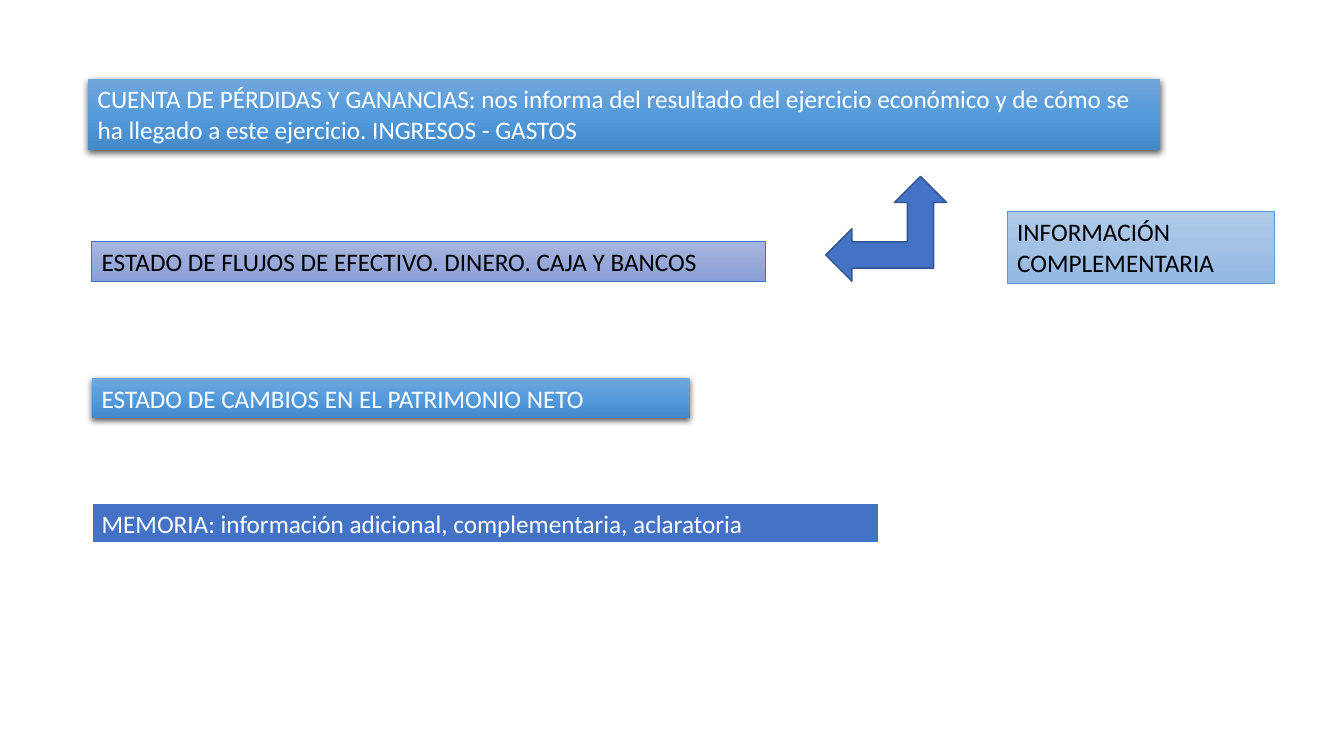
import copy

import pptx
import pptx.dml.color
import pptx.enum.shapes
import pptx.enum.text
import pptx.oxml
import pptx.oxml.ns
import pptx.util

RGB = pptx.dml.color.RGBColor
Inches = pptx.util.Inches
SHAPES = pptx.enum.shapes.MSO_SHAPE

WHITE = RGB(0xFF, 0xFF, 0xFF)
BLACK = RGB(0x00, 0x00, 0x00)
BLUE = RGB(0x44, 0x72, 0xC4)
DARK_BLUE = RGB(0x32, 0x54, 0x91)
SKY = RGB(0x5B, 0x9B, 0xD5)
STRONG_SKY = [RGB(0x71, 0xA6, 0xDB), RGB(0x55, 0x9B, 0xDB), RGB(0x44, 0x8A, 0xCA)]
SOFT_BLUE = [RGB(0xA8, 0xB7, 0xDF), RGB(0x9A, 0xAB, 0xD9), RGB(0x88, 0x9E, 0xD7)]
SOFT_SKY = [RGB(0xB1, 0xCB, 0xE9), RGB(0xA3, 0xC1, 0xE5), RGB(0x93, 0xB9, 0xE4)]

STYLES = {
    "raised": dict(colors=STRONG_SKY, border=None, ink=WHITE, raised=True),
    "soft blue": dict(colors=SOFT_BLUE, border=(BLUE, 0.5), ink=BLACK),
    "soft sky": dict(colors=SOFT_SKY, border=(SKY, 0.5), ink=BLACK),
    "solid": dict(colors=[BLUE], border=(WHITE, 1.5), ink=WHITE),
}

STATEMENTS = [
    ("CUENTA DE PÉRDIDAS Y GANANCIAS: nos informa del resultado del ejercicio "
     "económico y de cómo se ha llegado a este ejercicio. INGRESOS - GASTOS",
     (0.87, 0.78, 10.64, 0.71), "raised"),
    ("ESTADO DE FLUJOS DE EFECTIVO. DINERO. CAJA Y BANCOS",
     (0.91, 2.39, 6.68, 0.4), "soft blue"),
    ("INFORMACIÓN COMPLEMENTARIA", (9.99, 2.1, 2.65, 0.71), "soft sky"),
    ("ESTADO DE CAMBIOS EN EL PATRIMONIO NETO",
     (0.91, 3.75, 5.93, 0.4), "raised"),
    ("MEMORIA: información adicional, complementaria, aclaratoria",
     (0.91, 4.99, 7.81, 0.4), "solid"),
]
ARROW_BOX = (8.19, 1.75, 1.2, 1.04)

SHADOW = (
    '<a:outerShdw xmlns:a="http://schemas.openxmlformats.org/drawingml/2006/main" '
    'blurRad="57150" dist="19050" dir="5400000" algn="ctr" rotWithShape="0">'
    '<a:srgbClr val="000000"><a:alpha val="63000"/></a:srgbClr></a:outerShdw>'
)


def paint(shape, colors):
    if len(colors) == 1:
        shape.fill.solid()
        shape.fill.fore_color.rgb = colors[0]
        return
    shape.fill.gradient()
    shape.fill.gradient_angle = 270
    stop_list = next(shape._element.spPr.iter(pptx.oxml.ns.qn("a:gsLst")))
    stop_list.insert(1, copy.deepcopy(stop_list[0]))
    for index, (stop, color) in enumerate(zip(shape.fill.gradient_stops, colors)):
        stop.position = index / (len(colors) - 1)
        stop.color.rgb = color


def add_block(slide, kind, box, colors, border, raised=False):
    shape = slide.shapes.add_shape(kind, *map(Inches, box))
    shape.shadow.inherit = False
    paint(shape, colors)
    if border:
        shape.line.color.rgb = border[0]
        shape.line.width = pptx.util.Pt(border[1])
    else:
        shape.line.fill.background()
    if raised:
        effects = shape._element.spPr.find(pptx.oxml.ns.qn("a:effectLst"))
        effects.append(pptx.oxml.parse_xml(SHADOW))
    return shape


def write(shape, wording, ink):
    frame = shape.text_frame
    frame.text = wording
    frame.word_wrap = True
    frame.auto_size = pptx.enum.text.MSO_AUTO_SIZE.SHAPE_TO_FIT_TEXT
    frame.vertical_anchor = pptx.enum.text.MSO_ANCHOR.TOP
    paragraph = frame.paragraphs[0]
    paragraph.alignment = pptx.enum.text.PP_ALIGN.LEFT
    font = paragraph.runs[0].font
    font.name = "Calibri"
    font.size = pptx.util.Pt(18)
    font.color.rgb = ink


def main():
    deck = pptx.Presentation()
    deck.slide_width = Inches(13.33)
    deck.slide_height = Inches(7.5)
    slide = deck.slides.add_slide(deck.slide_layouts[6])
    for wording, box, style_name in STATEMENTS:
        style = dict(STYLES[style_name])
        ink = style.pop("ink")
        write(add_block(slide, SHAPES.RECTANGLE, box, **style), wording, ink)
    add_block(slide, SHAPES.LEFT_UP_ARROW, ARROW_BOX, [BLUE], (DARK_BLUE, 1))
    deck.save("out.pptx")


if __name__ == "__main__":
    main()
